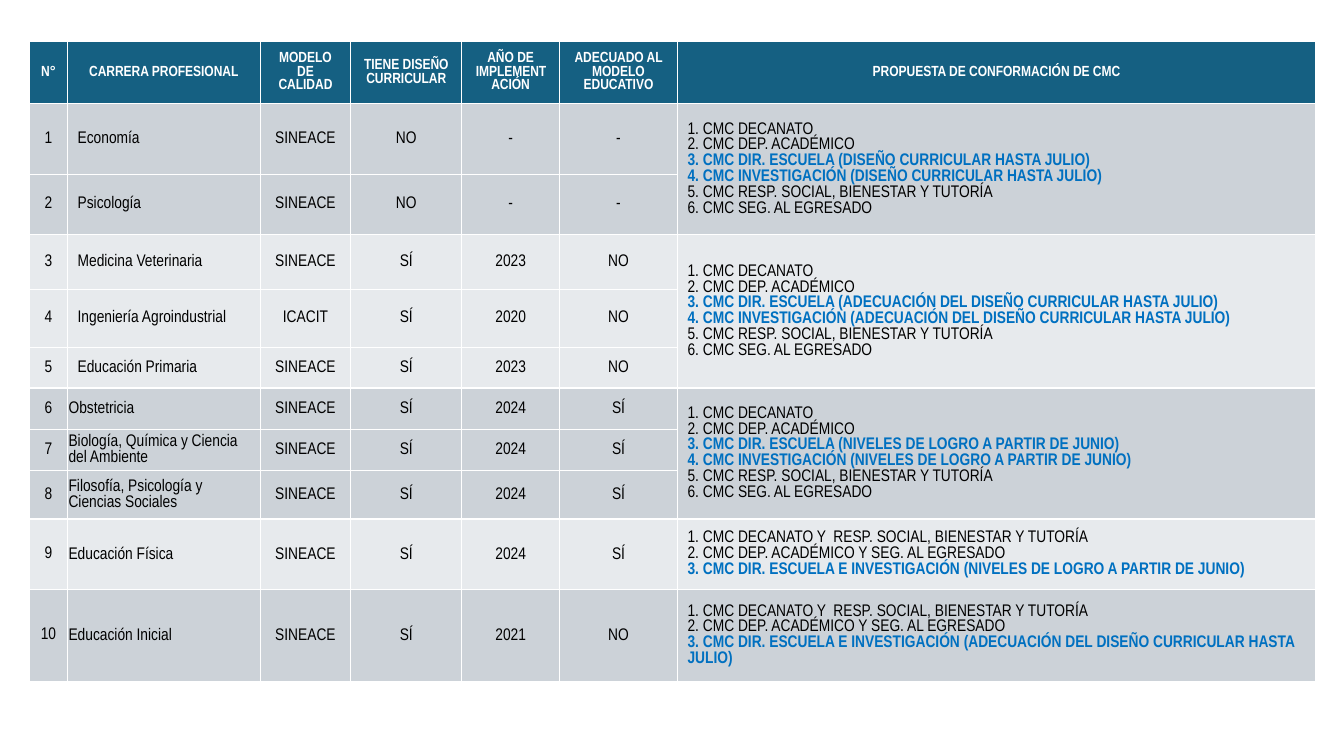
from pptx import Presentation
from pptx.dml.color import RGBColor
from pptx.enum.text import MSO_ANCHOR, PP_ALIGN
from pptx.util import Inches, Pt

LEFT, CENTER = PP_ALIGN.LEFT, PP_ALIGN.CENTER
MIDDLE = MSO_ANCHOR.MIDDLE

THEME = {
    "font": "Arial Narrow", "head_size": 10.5, "body_size": 12,
    "head": "156082", "dark": "CCD2D8", "light": "E7EAED",
    "white": "FFFFFF", "black": "000000", "blue": "0070C0",
}

COLS = [0.38, 1.91, 0.9, 1.1, 0.97, 1.17, 6.33]
ROWS = [0.62, 0.7, 0.6, 0.54, 0.58, 0.4, 0.41, 0.41, 0.48, 0.7, 0.91]
LAST = len(COLS) - 1
TIGHT = 6  # first row whose cells have narrow margins

HEADS = ["N°", "CARRERA PROFESIONAL", "MODELO DE CALIDAD",
         "TIENE DISEÑO CURRICULAR", "AÑO DE IMPLEMENTACIÓN",
         "ADECUADO AL MODELO EDUCATIVO", "PROPUESTA DE CONFORMACIÓN DE CMC"]

DESIGN = "DISEÑO CURRICULAR HASTA JULIO"
ADAPT = "ADECUACIÓN DEL " + DESIGN
LEVELS = "NIVELES DE LOGRO A PARTIR DE JUNIO"

FULL = ["CMC DECANATO", "CMC DEP. ACADÉMICO", "CMC DIR. ESCUELA ({})",
        "CMC INVESTIGACIÓN ({})", "CMC RESP. SOCIAL, BIENESTAR Y TUTORÍA",
        "CMC SEG. AL EGRESADO"]
SHORT = ["CMC DECANATO Y  RESP. SOCIAL, BIENESTAR Y TUTORÍA",
         "CMC DEP. ACADÉMICO Y SEG. AL EGRESADO",
         "CMC DIR. ESCUELA E INVESTIGACIÓN ({})"]

# Each group shares one proposal: items, task, careers
GROUPS = [
    (FULL, DESIGN, [
        ("Economía", "SINEACE", "NO", "-", "-"),
        ("Psicología", "SINEACE", "NO", "-", "-")]),
    (FULL, ADAPT, [
        ("Medicina Veterinaria", "SINEACE", "SÍ", "2023", "NO"),
        ("Ingeniería Agroindustrial", "ICACIT", "SÍ", "2020", "NO"),
        ("Educación Primaria", "SINEACE", "SÍ", "2023", "NO")]),
    (FULL, LEVELS, [
        ("Obstetricia", "SINEACE", "SÍ", "2024", "SÍ"),
        ("Biología, Química y Ciencia del Ambiente", "SINEACE", "SÍ", "2024", "SÍ"),
        ("Filosofía, Psicología y Ciencias Sociales", "SINEACE", "SÍ", "2024", "SÍ")]),
    (SHORT, LEVELS, [("Educación Física", "SINEACE", "SÍ", "2024", "SÍ")]),
    (SHORT, ADAPT, [("Educación Inicial", "SINEACE", "SÍ", "2021", "NO")]),
]


def paint(cell, fill):
    cell.fill.solid()
    cell.fill.fore_color.rgb = RGBColor.from_string(THEME[fill])
    cell.vertical_anchor = MIDDLE


def style(para, align, size, color, bold):
    para.alignment = align
    for run in para.runs:
        run.font.name = THEME["font"]
        run.font.size = Pt(THEME[size])
        run.font.bold = bold
        run.font.color.rgb = RGBColor.from_string(THEME[color])


deck = Presentation()
deck.slide_width, deck.slide_height = Inches(13.33), Inches(7.5)
slide = deck.slides.add_slide(deck.slide_layouts[6])

table = slide.shapes.add_table(
    len(ROWS), len(COLS), Inches(0.29), Inches(0.41),
    Inches(sum(COLS)), Inches(sum(ROWS))).table
table.horz_banding = False
for col, width in zip(table.columns, COLS):
    col.width = Inches(width)
for row, height in zip(table.rows, ROWS):
    row.height = Inches(height)

for c, head in enumerate(HEADS):
    cell = table.cell(0, c)
    paint(cell, "head")
    cell.text_frame.text = head
    style(cell.text_frame.paragraphs[0], CENTER, "head_size", "white", True)

r = 1
for g, (items, task, careers) in enumerate(GROUPS):
    fill = ("dark", "light")[g % 2]
    plan = table.cell(r, LAST)
    if len(careers) > 1:
        plan.merge(table.cell(r + len(careers) - 1, LAST))
    plan.text_frame.text = "\n".join(
        f"{n}. {item.format(task)}" for n, item in enumerate(items, 1))
    for item, para in zip(items, plan.text_frame.paragraphs):
        key = "{}" in item
        style(para, LEFT, "body_size", "blue" if key else "black", key)

    for career in careers:
        paint(table.cell(r, LAST), fill)
        for c, text in enumerate((str(r), *career)):
            cell = table.cell(r, c)
            paint(cell, fill)
            if r >= TIGHT and c > 0:
                cell.margin_left = cell.margin_right = cell.margin_top = Inches(0.01)
                cell.margin_bottom = 0
            cell.text_frame.text = text
            style(cell.text_frame.paragraphs[0], LEFT if c == 1 else CENTER,
                  "body_size", "black", False)
        r += 1

deck.save("out.pptx")
